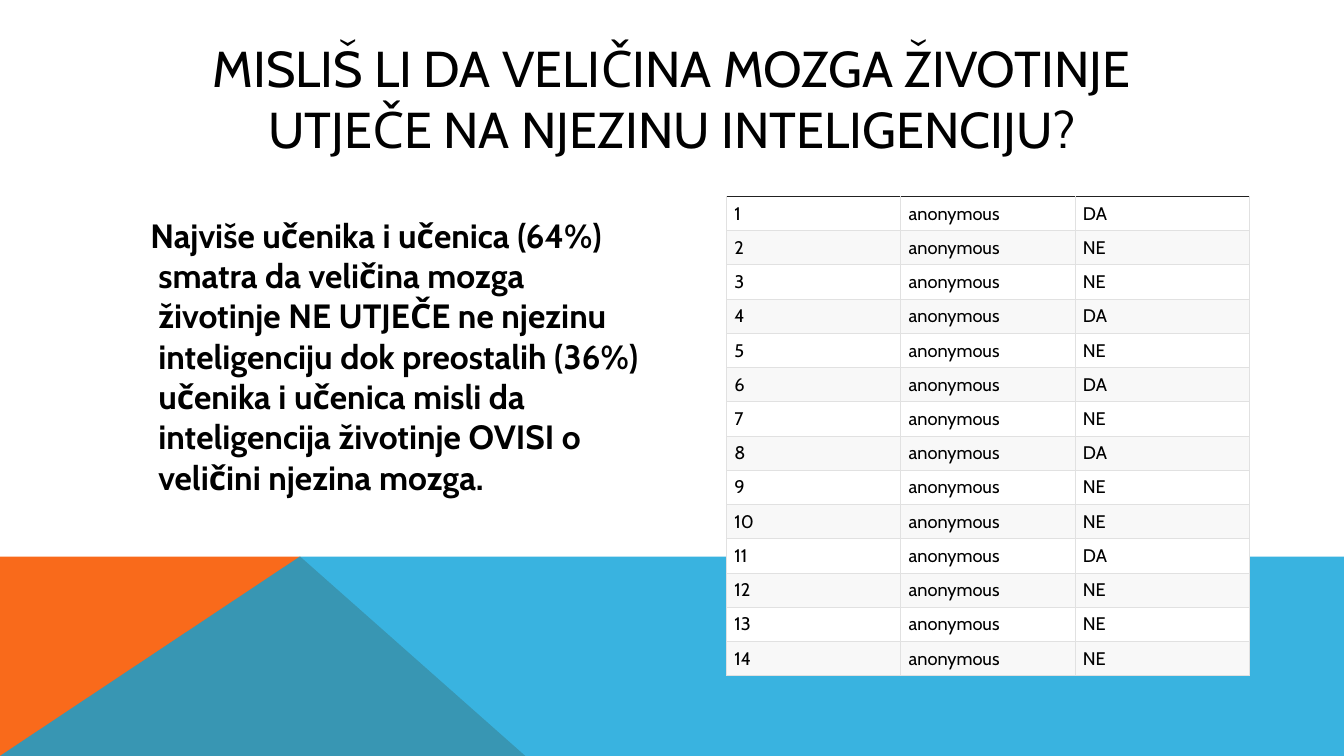
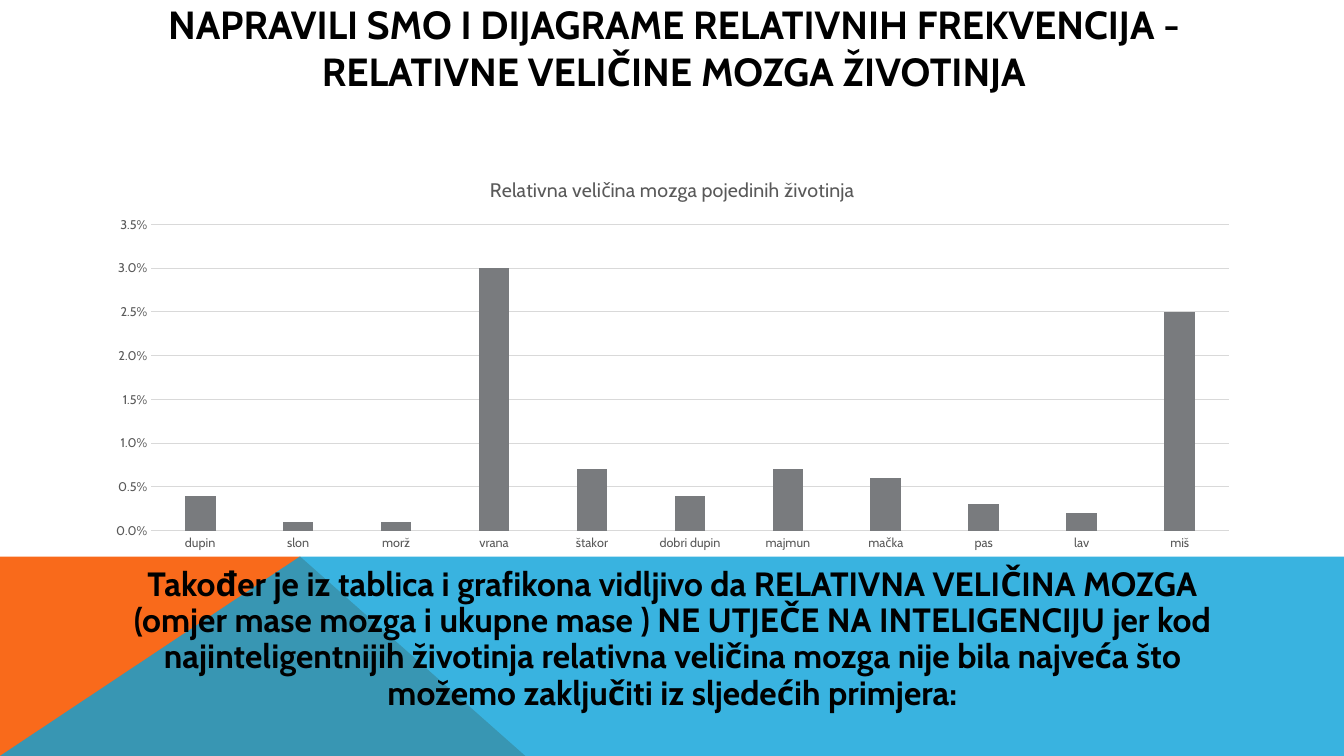
from lxml.etree import SubElement
from pptx import Presentation
from pptx.chart.data import CategoryChartData
from pptx.dml.color import RGBColor
from pptx.enum.chart import XL_CHART_TYPE, XL_TICK_MARK
from pptx.enum.text import MSO_ANCHOR, PP_ALIGN
from pptx.oxml.ns import qn
from pptx.util import Cm, Pt

WIDTH, HEIGHT = 33.87, 19.05
BAND_TOP = 14.03


def apply(obj, values):
    for name, value in values.items():
        setattr(obj, name, value)


class Deck:
    FONT = "Cabin"
    COLORS = {
        "text": "000000",
        "muted": "595959",
        "orange": "F96A1B",
        "blue": "08A1D9",
        "bar": "797B7E",
        "grid": "D9D9D9",
        "white": "FFFFFF",
        "stripe": "F8F8F8",
        "border": "E1E1E1",
        "rule": "212121",
    }

    def __init__(self):
        self.prs = Presentation()
        apply(self.prs, {"slide_width": Cm(WIDTH), "slide_height": Cm(HEIGHT)})
        self.s = None

    def rgb(self, color):
        return RGBColor.from_string(self.COLORS[color])

    def font(self, font, size, color="text", bold=False):
        apply(font, {"name": self.FONT, "size": Pt(size), "bold": bold})
        font.color.rgb = self.rgb(color)

    def slide(self):
        self.s = self.prs.slides.add_slide(self.prs.slide_layouts[6])
        self.polygon([(0, HEIGHT), (0, BAND_TOP), (7.57, BAND_TOP), (13.24, HEIGHT)], "orange")
        self.polygon([(0, HEIGHT), (7.55, BAND_TOP), (WIDTH, BAND_TOP), (WIDTH, HEIGHT)],
                     "blue", 80)

    def polygon(self, points, color, opacity=100):
        start, *rest = [(Cm(x), Cm(y)) for x, y in points]
        builder = self.s.shapes.build_freeform(*start)
        builder.add_line_segments(rest, close=True)
        sp = builder.convert_to_shape()
        sp.shadow.inherit = False
        sp.line.fill.background()
        sp.fill.solid()
        sp.fill.fore_color.rgb = self.rgb(color)
        if opacity < 100:
            rgb = sp.fill._xPr.find(qn("a:solidFill")).find(qn("a:srgbClr"))
            SubElement(rgb, qn("a:alpha"), val=str(opacity * 1000))

    def text(self, text, box, size, bold=True, anchor=MSO_ANCHOR.MIDDLE,
             margin=0.13, indent=None, **paragraph):
        tf = self.s.shapes.add_textbox(*map(Cm, box)).text_frame
        apply(tf, {"word_wrap": True, "vertical_anchor": anchor,
                   "margin_top": Cm(margin), "margin_bottom": Cm(margin)})
        p = tf.paragraphs[0]
        apply(p, {"alignment": PP_ALIGN.CENTER, **paragraph})
        if indent:
            left, first = indent
            pPr = p._p.get_or_add_pPr()
            pPr.set("marL", str(Cm(left)))
            pPr.set("indent", str(Cm(first)))
        r = p.add_run()
        r.text = text
        self.font(r.font, size, bold=bold)

    def title(self, text, box, size, bold):
        self.text(text, box, size, bold, margin=0)

    def border(self, cell, side, color):
        ln = SubElement(cell._tc.get_or_add_tcPr(), qn(f"a:ln{side}"), w=str(Pt(0.75)))
        fill = SubElement(ln, qn("a:solidFill"))
        SubElement(fill, qn("a:srgbClr"), val=self.COLORS[color])

    def table(self, rows, box):
        table = self.s.shapes.add_table(len(rows), len(rows[0]), *map(Cm, box)).table
        apply(table, {"first_row": False, "horz_banding": False})
        for i, row in enumerate(rows):
            for j, value in enumerate(row):
                cell = table.cell(i, j)
                apply(cell, {"text": value, "vertical_anchor": MSO_ANCHOR.MIDDLE,
                             "margin_left": Cm(0.2), "margin_right": Cm(0.2),
                             "margin_top": Cm(0.15), "margin_bottom": Cm(0.15)})
                self.font(cell.text_frame.paragraphs[0].runs[0].font, 13)
                for side in "LRTB":
                    self.border(cell, side, "rule" if side == "T" and i == 0 else "border")
                cell.fill.solid()
                cell.fill.fore_color.rgb = self.rgb("stripe" if i % 2 else "white")

    def line(self, line):
        line.width = Pt(0.75)
        line.color.rgb = self.rgb("grid")

    def chart(self, title, values, box):
        data = CategoryChartData(number_format="0.0%")
        data.categories = list(values)
        data.add_series("Series 1", list(values.values()))
        chart = self.s.shapes.add_chart(
            XL_CHART_TYPE.COLUMN_CLUSTERED, *map(Cm, box), data).chart
        apply(chart, {"has_legend": False, "has_title": True})
        self.font(chart.font, 10)
        tf = chart.chart_title.text_frame
        tf.text = title
        self.font(tf.paragraphs[0].runs[0].font, 14, "muted")
        chart.chart_title.include_in_layout = False

        plot = chart.plots[0]
        apply(plot, {"gap_width": 219, "overlap": -27, "vary_by_categories": False})
        fill = plot.series[0].format.fill
        fill.solid()
        fill.fore_color.rgb = self.rgb("bar")

        for axis in (chart.category_axis, chart.value_axis):
            apply(axis, {"major_tick_mark": XL_TICK_MARK.NONE,
                         "minor_tick_mark": XL_TICK_MARK.NONE})
            self.font(axis.tick_labels.font, 9, "muted")
        self.line(chart.category_axis.format.line)
        axis = chart.value_axis
        axis.format.line.fill.background()
        self.line(axis.major_gridlines.format.line)
        apply(axis.tick_labels, {"number_format": "0.0%", "number_format_is_linked": False})


def main():
    deck = Deck()

    deck.slide()
    deck.title("MISLIŠ LI DA VELIČINA MOZGA ŽIVOTINJE UTJEČE NA NJEZINU INTELIGENCIJU?",
               (3, 1.17, 27.86, 2.6), 36, False)
    deck.text("Najviše učenika i učenica (64%) smatra da veličina mozga životinje NE UTJEČE "
              "ne njezinu inteligenciju dok preostalih (36%) učenika i učenica misli da "
              "inteligencija životinje OVISI o veličini njezina mozga.",
              (2.77, 5.28, 13.84, 7.65), 24, anchor=MSO_ANCHOR.TOP, indent=(0.97, -0.2),
              alignment=PP_ALIGN.LEFT, space_before=Pt(8))
    answers = "DA NE NE DA NE DA NE DA NE NE DA NE NE NE".split()
    deck.table([(str(i), "anonymous", answer) for i, answer in enumerate(answers, 1)],
               (18.31, 4.95, 13.17, 12.09))

    deck.slide()
    deck.title("NAPRAVILI SMO I DIJAGRAME RELATIVNIH FREKVENCIJA - "
               "RELATIVNE VELIČINE MOZGA ŽIVOTINJA", (3.05, 0, 27.86, 2.41), 28, True)
    deck.chart("Relativna veličina mozga pojedinih životinja",
               {"dupin": 0.004, "slon": 0.001, "morž": 0.001, "vrana": 0.03,
                "štakor": 0.007, "dobri dupin": 0.004, "majmun": 0.007,
                "mačka": 0.006, "pas": 0.003, "lav": 0.002, "miš": 0.025},
               (2.34, 4.01, 29.21, 10.06))
    deck.text("Također je iz tablica i grafikona vidljivo da RELATIVNA VELIČINA MOZGA "
              "(omjer mase mozga i ukupne mase ) NE UTJEČE NA INTELIGENCIJU jer kod "
              "najinteligentnijih životinja relativna veličina mozga nije bila najveća "
              "što možemo zaključiti iz sljedećih primjera:",
              (2.34, 14.15, 29.21, 3.94), 24, line_spacing=0.9)

    deck.prs.save("out.pptx")


if __name__ == "__main__":
    main()
